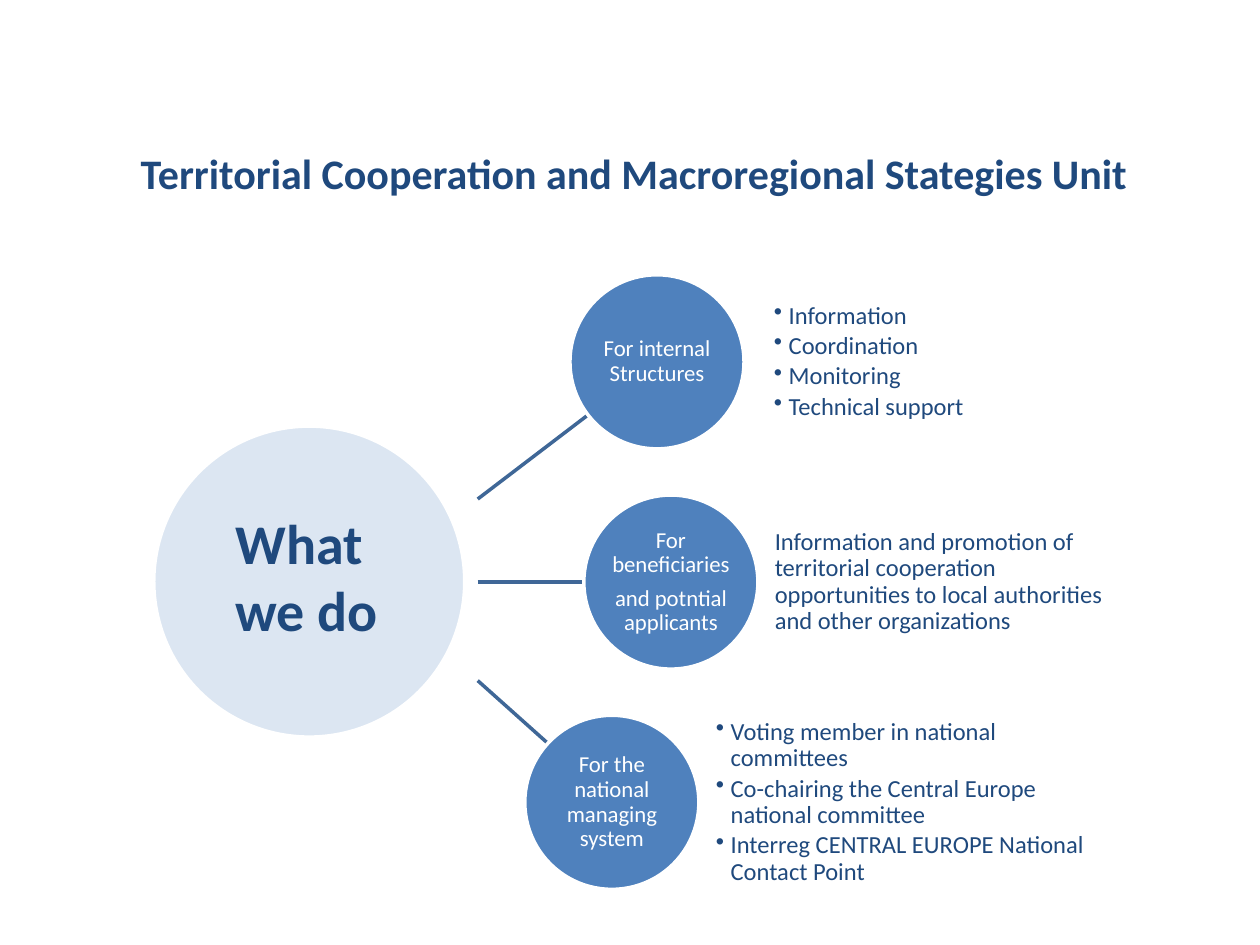
from lxml import etree
from pptx import Presentation
from pptx.dml.color import RGBColor
from pptx.enum.shapes import MSO_CONNECTOR, MSO_SHAPE
from pptx.enum.text import MSO_ANCHOR, PP_ALIGN
from pptx.oxml.ns import qn
from pptx.util import Cm, Pt

NAVY = RGBColor(0x1F, 0x49, 0x7D)
BLUE = RGBColor(0x4F, 0x81, 0xBD)
PALE_BLUE = RGBColor(0xDC, 0xE6, 0xF2)
LINE_BLUE = RGBColor(0x3F, 0x67, 0x97)
WHITE = RGBColor(0xFF, 0xFF, 0xFF)
FONT = "Calibri"
OVAL = MSO_SHAPE.OVAL
STRAIGHT = MSO_CONNECTOR.STRAIGHT
TOP, MIDDLE, BOTTOM = MSO_ANCHOR.TOP, MSO_ANCHOR.MIDDLE, MSO_ANCHOR.BOTTOM
LEFT, CENTER = PP_ALIGN.LEFT, PP_ALIGN.CENTER

TITLE = "Territorial Cooperation and Macroregional Stategies Unit"
HUB = "What we do"
# Lengths in cm; a spoke runs from (SPOKE_START, first y) to (x, y).
BRANCHES = [
    {
        "audience": ["For internal Structures"],
        "tasks": ["Information", "Coordination", "Monitoring", "Technical support"],
        "bulleted": True,
        "circle_left": 11.49, "tasks_left": 15.6, "tasks_width": 6.5,
        "spoke": (10.06, 11.86, 8.36),
    },
    {
        "audience": ["For beneficiaries", "and potntial applicants"],
        "tasks": ["Information and promotion of territorial cooperation "
                  "opportunities to local authorities and other organizations"],
        "bulleted": False,
        "circle_left": 11.77, "tasks_left": 15.62, "tasks_width": 6.68,
        "spoke": (11.73, 11.76, 11.73),
    },
    {
        "audience": ["For the national managing system"],
        "tasks": ["Voting member in national committees",
                  "Co-chairing the Central Europe national committee",
                  "Interreg CENTRAL EUROPE National Contact Point"],
        "bulleted": True,
        "circle_left": 10.58, "tasks_left": 14.43, "tasks_width": 8.05,
        "spoke": (13.72, 11.05, 14.99),
    },
]
FIRST_TOP, PITCH, DIAMETER = 5.54, 4.44, 3.51
SPOKE_START = 9.63
INDENT = Cm(0.3)


def add_bullet(paragraph):
    properties = paragraph._p.get_or_add_pPr()
    properties.set("marL", str(INDENT))
    properties.set("indent", str(-INDENT))
    etree.SubElement(properties, qn("a:buChar")).set("char", "•")


def write_text(shape, texts, size, color, bold=False, align=LEFT, anchor=TOP,
               spacing=None, after=0, margin=None, bulleted=False):
    frame = shape.text_frame
    frame.word_wrap = True
    frame.vertical_anchor = anchor
    if margin is not None:
        frame.margin_left = frame.margin_right = Cm(margin)
        frame.margin_top = frame.margin_bottom = Cm(margin)
    for index, text in enumerate(texts):
        paragraph = frame.add_paragraph() if index else frame.paragraphs[0]
        paragraph.alignment = align
        paragraph.line_spacing = spacing
        paragraph.space_after = Pt(after)
        if bulleted:
            add_bullet(paragraph)
        run = paragraph.add_run()
        run.text = text
        run.font.name = FONT
        run.font.size = Pt(size)
        run.font.bold = bold
        run.font.color.rgb = color


def add_text_box(slide, left, top, width, height):
    return slide.shapes.add_textbox(Cm(left), Cm(top), Cm(width), Cm(height))


def add_circle(slide, left, top, diameter, color):
    circle = slide.shapes.add_shape(OVAL, Cm(left), Cm(top), Cm(diameter), Cm(diameter))
    circle.shadow.inherit = False
    circle.fill.solid()
    circle.fill.fore_color.rgb = color
    circle.line.color.rgb = WHITE
    circle.line.width = Pt(2)
    return circle


def add_spoke(slide, start_y, end_x, end_y):
    spoke = slide.shapes.add_connector(
        STRAIGHT, Cm(SPOKE_START), Cm(start_y), Cm(end_x), Cm(end_y))
    spoke.line.color.rgb = LINE_BLUE
    spoke.line.width = Pt(2)
    etree.SubElement(spoke._element.spPr, qn("a:effectLst"))


def main():
    presentation = Presentation()
    presentation.slide_width, presentation.slide_height = Cm(25.4), Cm(19.05)
    slide = presentation.slides.add_slide(presentation.slide_layouts[6])

    title = add_text_box(slide, 2.06, 2.59, 21.44, 1.52)
    write_text(title, [TITLE], 24, NAVY, bold=True, align=CENTER, anchor=BOTTOM)

    for branch in BRANCHES:
        add_spoke(slide, *branch["spoke"])
    add_circle(slide, 3.1, 8.59, 6.27, PALE_BLUE)

    for index, branch in enumerate(BRANCHES):
        top = FIRST_TOP + index * PITCH
        circle = add_circle(slide, branch["circle_left"], top, DIAMETER, BLUE)
        write_text(circle, branch["audience"], 13, WHITE, align=CENTER,
                   anchor=MIDDLE, spacing=0.9, after=5, margin=0)
        tasks = add_text_box(slide, branch["tasks_left"], top,
                             branch["tasks_width"], DIAMETER)
        write_text(tasks, branch["tasks"], 14, NAVY, anchor=MIDDLE, spacing=0.9,
                   after=2.2, margin=0, bulleted=branch["bulleted"])

    hub_label = add_text_box(slide, 4.5, 10.13, 3.42, 3)
    write_text(hub_label, [HUB], 32, NAVY, bold=True)

    presentation.save("out.pptx")


if __name__ == "__main__":
    main()
